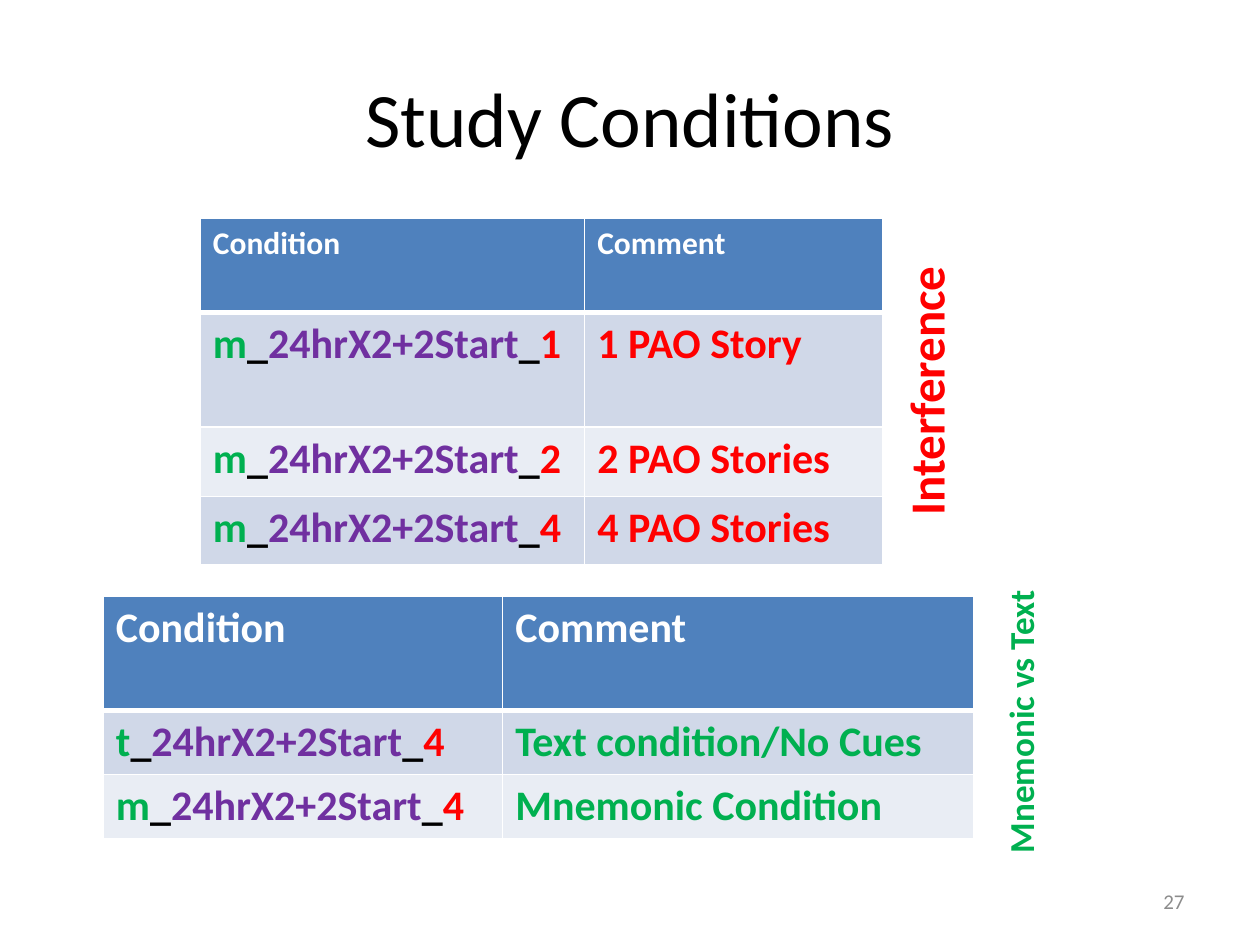
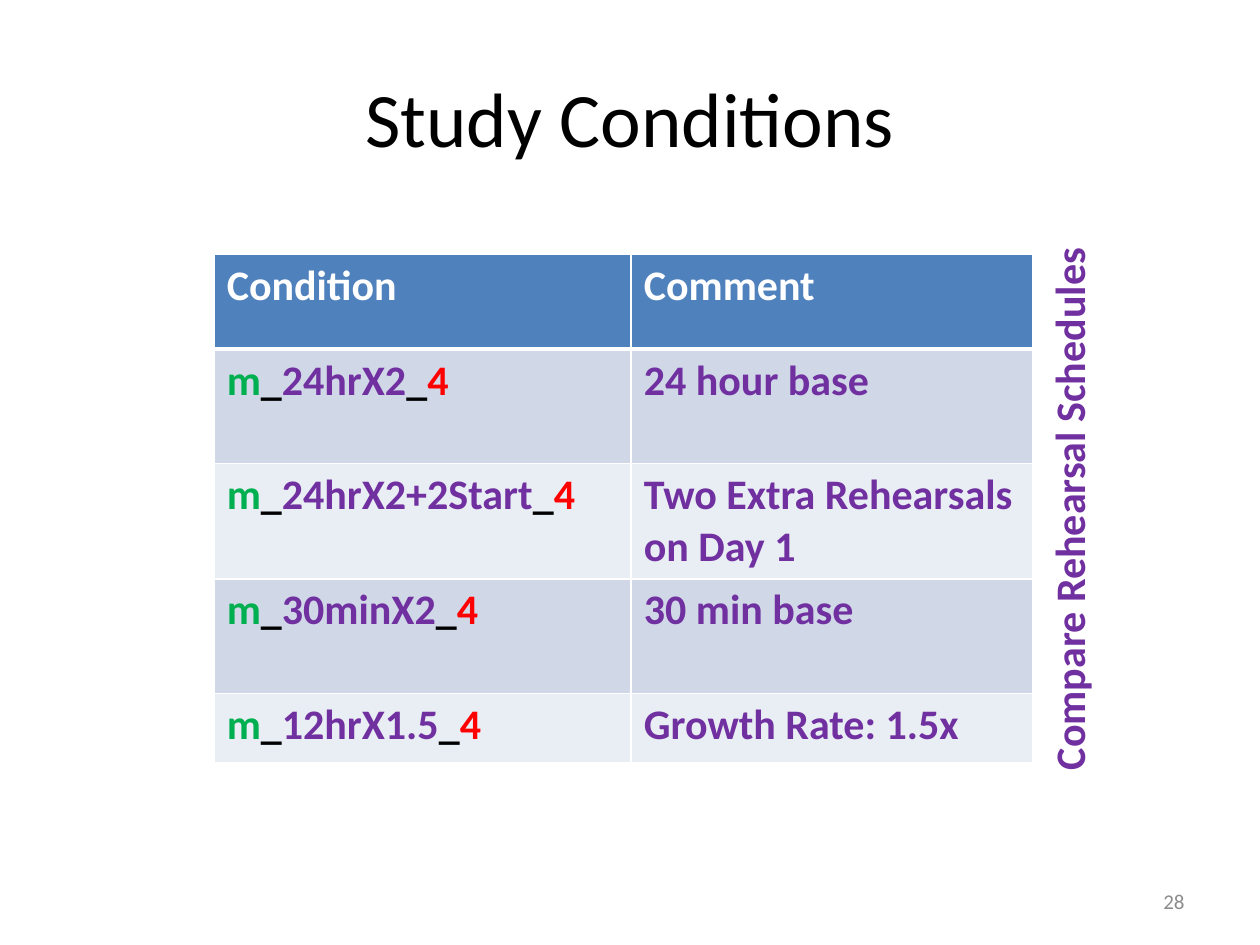
from pptx import Presentation
from pptx.dml.color import RGBColor
from pptx.enum.text import MSO_ANCHOR, PP_ALIGN
from pptx.oxml import parse_xml
from pptx.util import Pt

PX = 9144
FONT = "Calibri"
NS = "http://schemas.openxmlformats.org/drawingml/2006/main"
COLORS = {
    "black": "000000", "white": "FFFFFF", "gray": "8C8C8C",
    "header": "4F81BD", "odd": "D0D8E8", "even": "E9EDF4",
    "green": "00B050", "purple": "7030A0", "red": "FF0000",
}


def add_run(p, text, size, color, bold=True):
    r = p.add_run()
    r.text = text
    r.font.name = FONT
    r.font.size = Pt(size)
    r.font.bold = bold
    r.font.color.rgb = RGBColor.from_string(COLORS[color])


def set_borders(cell, top, bottom):
    tcPr = cell._tc.get_or_add_tcPr()
    widths = {"lnL": 1, "lnR": 1, "lnT": top, "lnB": bottom}
    for i, (tag, width) in enumerate(widths.items()):
        tcPr.insert(i, parse_xml(
            f'<a:{tag} xmlns:a="{NS}" w="{Pt(width)}"><a:solidFill>'
            f'<a:srgbClr val="{COLORS["white"]}"/></a:solidFill></a:{tag}>'))


slides = [
    {
        "number": 27,
        "tables": [
            {"at": (159, 173), "cols": (305, 237), "rows": (75, 91, 55, 54),
             "header_size": 18, "color": "red",
             "cells": [("m_24hrX2+2Start_1", "1 PAO Story"),
                       ("m_24hrX2+2Start_2", "2 PAO Stories"),
                       ("m_24hrX2+2Start_4", "4 PAO Stories")]},
            {"at": (82, 473), "cols": (317, 374), "rows": (91, 50, 50),
             "header_size": 24, "color": "green",
             "cells": [("t_24hrX2+2Start_4", "Text condition/No Cues"),
                       ("m_24hrX2+2Start_4", "Mnemonic Condition")]},
        ],
        "labels": [(" Interference", 28, "red", (706, 208, 67, 220)),
                   ("Mnemonic vs Text", 20, "green", (788, 467, 54, 220))],
    },
    {
        "number": 28,
        "tables": [
            {"at": (170, 202), "cols": (331, 319), "rows": (75, 91, 91, 91, 55),
             "header_size": 24, "color": "purple",
             "cells": [("m_24hrX2_4", "24 hour base"),
                       ("m_24hrX2+2Start_4", "Two Extra Rehearsals on Day 1"),
                       ("m_30minX2_4", "30 min base"),
                       ("m_12hrX1.5_4", "Growth Rate: 1.5x")]},
        ],
        "labels": [("Compare Rehearsal Schedules", 24, "purple", (823, 192, 61, 429))],
    },
]

prs = Presentation()
prs.slide_width = 1000 * PX
prs.slide_height = 750 * PX

for content in slides:
    s = prs.slides.add_slide(prs.slide_layouts[5])
    title = s.shapes.title
    title.left, title.top, title.width, title.height = (v * PX for v in (50, 30, 900, 125))
    tf = title.text_frame
    tf.vertical_anchor = MSO_ANCHOR.MIDDLE
    tf.paragraphs[0].alignment = PP_ALIGN.CENTER
    add_run(tf.paragraphs[0], "Study Conditions", 44, "black", False)

    for spec in content["tables"]:
        x, y = spec["at"]
        cols, rows = spec["cols"], spec["rows"]
        frame = s.shapes.add_table(len(rows), len(cols), x * PX, y * PX,
                                   sum(cols) * PX, sum(rows) * PX)
        table = frame.table
        for column, width in zip(table.columns, cols):
            column.width = width * PX
        for row, height in zip(table.rows, rows):
            row.height = height * PX

        for i, texts in enumerate([("Condition", "Comment")] + spec["cells"]):
            for j, text in enumerate(texts):
                cell = table.cell(i, j)
                cell.fill.solid()
                fill = "header" if i == 0 else "odd" if i % 2 else "even"
                cell.fill.fore_color.rgb = RGBColor.from_string(COLORS[fill])
                set_borders(cell, 3 if i == 1 else 1, 3 if i == 0 else 1)
                p = cell.text_frame.paragraphs[0]
                if i == 0:
                    add_run(p, text, spec["header_size"], "white")
                elif j == 1:
                    add_run(p, text, 24, spec["color"])
                else:
                    cue, schedule, stories = text.split("_")
                    add_run(p, cue, 24, "green")
                    add_run(p, "_", 24, "black")
                    add_run(p, schedule, 24, "purple")
                    add_run(p, "_", 24, "black")
                    add_run(p, stories, 24, "red")

    for text, size, color, box in content["labels"]:
        sp = s.shapes.add_textbox(*(v * PX for v in box))
        tf = sp.text_frame
        tf.word_wrap = False
        tf._txBody.bodyPr.set("vert", "vert270")
        add_run(tf.paragraphs[0], text, size, color)

    sp = s.shapes.add_textbox(*(v * PX for v in (717, 695, 233, 40)))
    tf = sp.text_frame
    tf.word_wrap = True
    tf.vertical_anchor = MSO_ANCHOR.MIDDLE
    tf.paragraphs[0].alignment = PP_ALIGN.RIGHT
    add_run(tf.paragraphs[0], str(content["number"]), 12, "gray", False)

prs.save("out.pptx")
